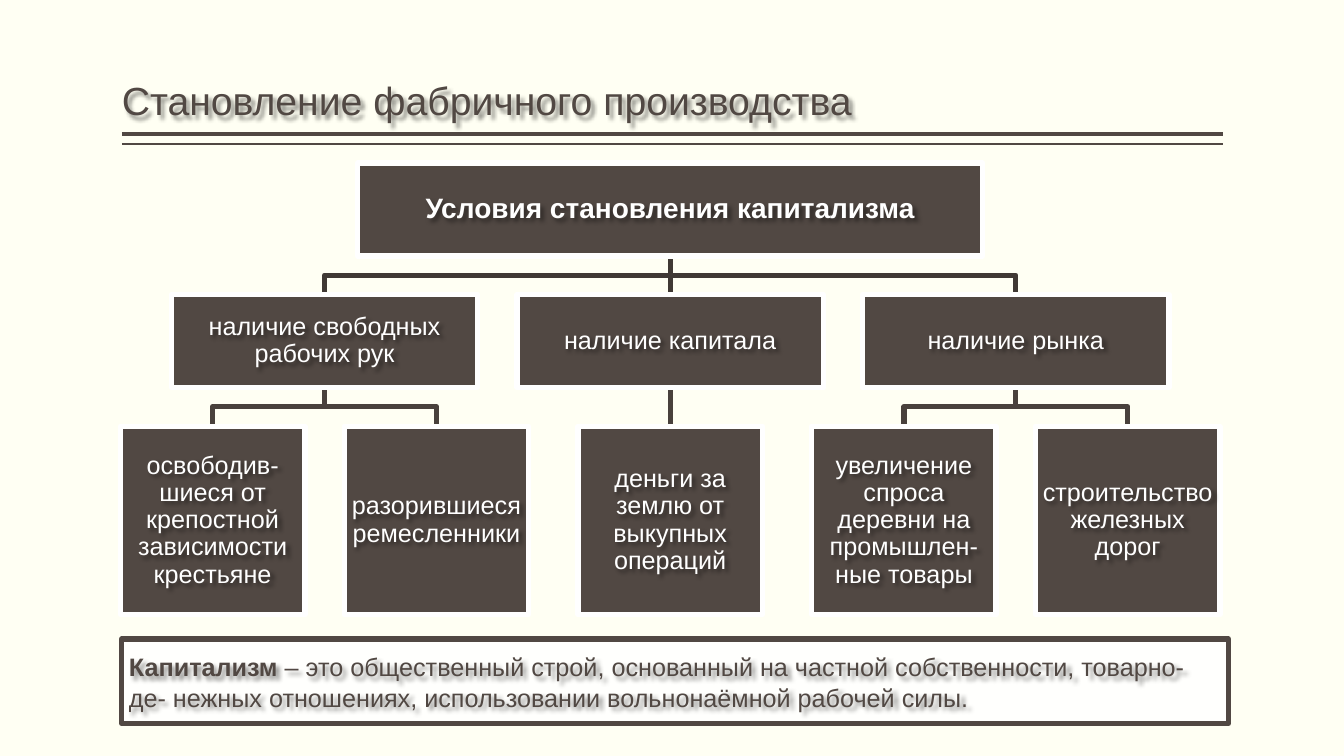
"""Build a slide with a tree of the conditions for capitalism and a definition."""
from lxml.etree import SubElement
from pptx import Presentation
from pptx.dml.color import RGBColor
from pptx.enum.shapes import MSO_CONNECTOR, MSO_SHAPE
from pptx.enum.text import MSO_ANCHOR, PP_ALIGN
from pptx.oxml.ns import qn
from pptx.util import Cm, Pt

CREAM = RGBColor(0xFF, 0xFF, 0xF3)
WHITE = RGBColor(0xFF, 0xFF, 0xFF)
BROWN = RGBColor(0x51, 0x48, 0x43)
UPPER_LINK = RGBColor(0x40, 0x39, 0x34)
LOWER_LINK = RGBColor(0x49, 0x41, 0x3C)

LEFT, RIGHT = 3.07, 30.81
CENTER = 16.89
ROOT_TOP, BRANCH_TOP, LEAF_TOP = 4.11, 7.42, 10.74
ROOT_W, BRANCH_W, LEAF_W = 15.75, 7.72, 4.65
BOX_H, LEAF_H = 2.34, 4.75
BRANCH_STEP, LEAF_STEP = 8.71, 5.64

BRANCHES = [
    ("наличие свободных рабочих рук",
     ["освободив- шиеся от крепостной зависимости крестьяне",
      "разорившиеся ремесленники"]),
    ("наличие капитала",
     ["деньги за землю от выкупных операций"]),
    ("наличие рынка",
     ["увеличение спроса деревни на промышлен- ные товары",
      "строительство железных дорог"]),
]


def spread(center, count, step):
    """Return evenly spaced positions around a center."""
    return [center + (i - (count - 1) / 2) * step for i in range(count)]


class Deck:
    """Hold the style and the current slide."""

    font = "Arial"
    thick = 3.78

    def __init__(self):
        self.prs = Presentation()
        self.prs.slide_width, self.prs.slide_height = Cm(33.87), Cm(19.05)
        self.s = self.prs.slides.add_slide(self.prs.slide_layouts[6])
        self.s.background.fill.solid()
        self.s.background.fill.fore_color.rgb = CREAM

    def line(self, x1, y1, x2, y2, color, width):
        cx = self.s.shapes.add_connector(
            MSO_CONNECTOR.STRAIGHT, Cm(x1), Cm(y1), Cm(x2), Cm(y2))
        cx.line.color.rgb = color
        cx.line.width = Pt(width)
        SubElement(cx._element.spPr, qn("a:effectLst"))

    def link(self, x1, y1, x2, y2, color):
        if abs(x1 - x2) < 0.01:
            self.line(x1, y1, x2, y2, color, self.thick)
            return
        mid = (y1 + y2) / 2
        fb = self.s.shapes.build_freeform(Cm(x1), Cm(y1))
        fb.add_line_segments(
            [(Cm(x1), Cm(mid)), (Cm(x2), Cm(mid)), (Cm(x2), Cm(y2))], close=False)
        sp = fb.convert_to_shape()
        sp.fill.background()
        sp.line.color.rgb = color
        sp.line.width = Pt(self.thick)
        sp.shadow.inherit = False

    def rect(self, x, y, w, h, fill, line, opacity=100):
        sp = self.s.shapes.add_shape(MSO_SHAPE.RECTANGLE, Cm(x), Cm(y), Cm(w), Cm(h))
        sp.fill.solid()
        sp.fill.fore_color.rgb = fill
        sp.line.color.rgb = line
        sp.line.width = Pt(self.thick)
        sp.shadow.inherit = False
        if opacity < 100:
            clr = sp.fill._xPr.find(qn("a:solidFill"))[0]
            SubElement(clr, qn("a:alpha"), val=str(opacity * 1000))

    def text(self, x, y, w, h, runs, size, color, align=PP_ALIGN.LEFT,
             anchor=MSO_ANCHOR.MIDDLE, inset=(0.03, 0.03), spacing=0.9):
        sp = self.s.shapes.add_textbox(Cm(x), Cm(y), Cm(w), Cm(h))
        tf = sp.text_frame
        tf.word_wrap = True
        tf.vertical_anchor = anchor
        tf.margin_left = tf.margin_right = Cm(inset[0])
        tf.margin_top = tf.margin_bottom = Cm(inset[1])
        p = tf.paragraphs[0]
        p.alignment = align
        p.line_spacing = spacing
        for content, bold in runs:
            r = p.add_run()
            r.text = content
            r.font.name = self.font
            r.font.size = Pt(size)
            r.font.bold = bold
            r.font.color.rgb = color
        self.soft_shadow(sp)

    def soft_shadow(self, sp):
        effects = SubElement(sp._element.spPr, qn("a:effectLst"))
        shadow = SubElement(effects, qn("a:outerShdw"), blurRad="38100",
                            dist="38100", dir="2700000", algn="tl")
        clr = SubElement(shadow, qn("a:srgbClr"), val="000000")
        SubElement(clr, qn("a:alpha"), val="43000")

    def node(self, center, y, w, h, label, size=18, bold=False):
        x = center - w / 2
        self.rect(x, y, w, h, BROWN, WHITE)
        self.text(x, y, w, h, [(label, bold)], size, WHITE, PP_ALIGN.CENTER)


def main():
    deck = Deck()
    deck.line(LEFT, 3.38, RIGHT, 3.38, BROWN, 3)
    deck.line(LEFT, 3.63, RIGHT, 3.63, BROWN, 1)
    deck.text(LEFT, 0.2, RIGHT - LEFT, 3.05,
              [("Становление фабричного производства", False)], 28, BROWN,
              anchor=MSO_ANCHOR.BOTTOM, inset=(0, 0.13))

    deck.rect(LEFT, 16.1, 27.89, 2.13, WHITE, BROWN, opacity=90)
    deck.text(3.15, 16.18, 27.74, 2.01, [
        ("Капитализм", True),
        (" – это общественный строй, основанный на частной собственности, "
         "товарно-де- нежных отношениях, использовании вольнонаёмной "
         "рабочей силы.", False),
    ], 18, BROWN, inset=(0.1, 0.05), spacing=1.0)

    centers = spread(CENTER, len(BRANCHES), BRANCH_STEP)
    for x, (_, leaves) in zip(centers, BRANCHES):
        deck.link(CENTER, ROOT_TOP + BOX_H, x, BRANCH_TOP, UPPER_LINK)
        for leaf_x in spread(x, len(leaves), LEAF_STEP):
            deck.link(x, BRANCH_TOP + BOX_H, leaf_x, LEAF_TOP, LOWER_LINK)

    deck.node(CENTER, ROOT_TOP, ROOT_W, BOX_H,
              "Условия становления капитализма", size=20, bold=True)
    for x, (label, leaves) in zip(centers, BRANCHES):
        deck.node(x, BRANCH_TOP, BRANCH_W, BOX_H, label)
        for leaf_x, leaf in zip(spread(x, len(leaves), LEAF_STEP), leaves):
            deck.node(leaf_x, LEAF_TOP, LEAF_W, LEAF_H, leaf)
    deck.prs.save("out.pptx")


if __name__ == "__main__":
    main()
